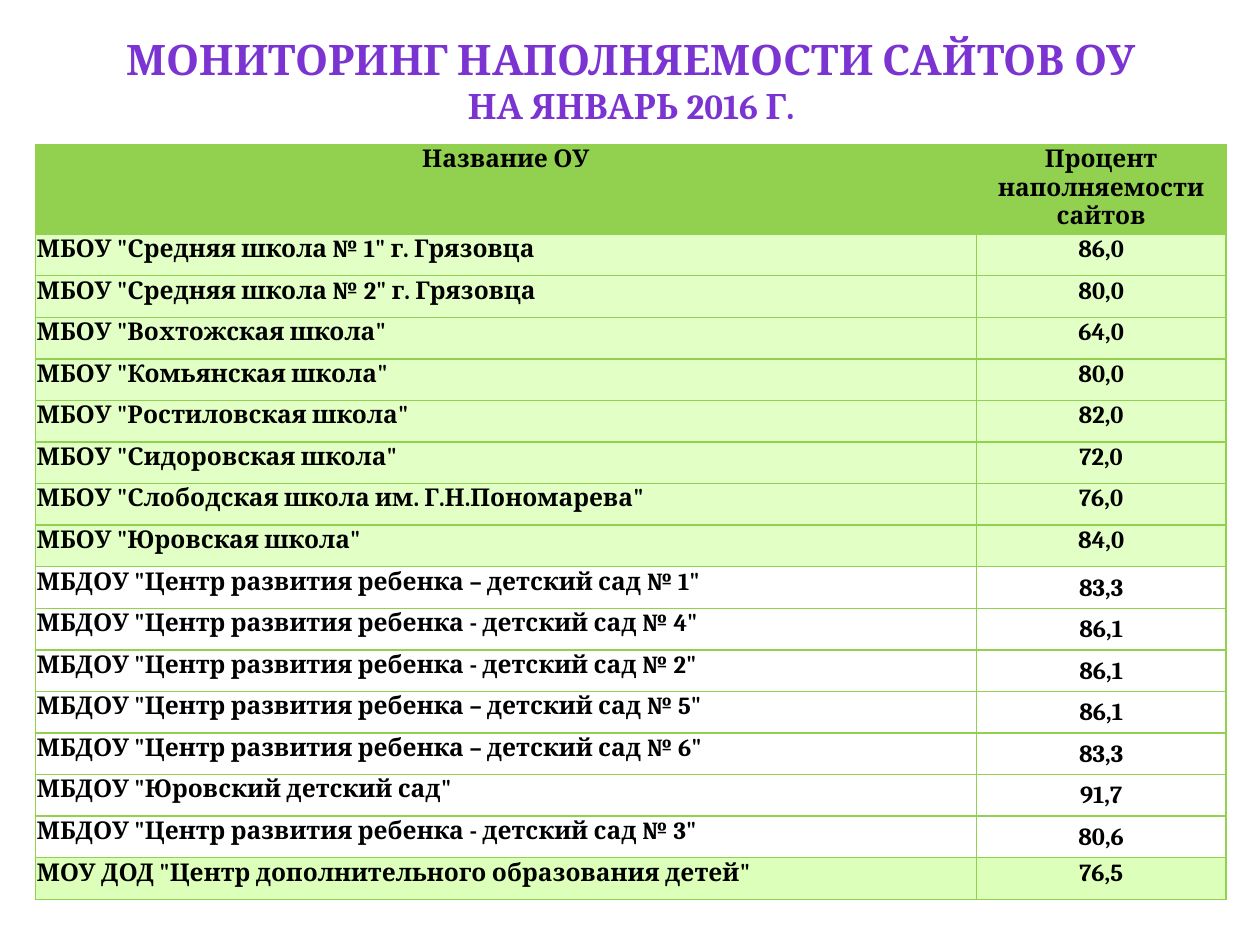
from typing import NamedTuple

from lxml.etree import SubElement as Sub
from pptx import Presentation
from pptx.dml.color import RGBColor as Rgb
from pptx.enum.text import MSO_ANCHOR as Anchor, PP_ALIGN as Align
from pptx.oxml.ns import qn
from pptx.util import Inches, Pt

HUES = {
    "title": "7B34D2",
    "text": "000000",
    "line": "92D050",
    "head": "92D050",
    "school": "E2FFC5",
    "nursery": "FFFFFF",
    "extra": "DCFFB9",
}
FONT = "Cambria"
WIDE, HIGH = Inches(10), Inches(7.5)
COLS = (0.747, 0.198)
ROW = 0.044


class Box(NamedTuple):
    left: float
    top: float
    width: float
    height: float

    def place(self) -> tuple[int, ...]:
        sides = (WIDE, HIGH, WIDE, HIGH)
        return tuple(int(share * side) for share, side in zip(self, sides))


class Entry(NamedTuple):
    name: str
    score: str
    kind: str


def center(number: int) -> str:
    return f'МБДОУ "Центр развития ребенка - детский сад № {number}"'


def dashed(number: int) -> str:
    return center(number).replace(" - ", " – ")


ENTRIES = [
    Entry("Название ОУ", "Процент наполняемости сайтов", "head"),
    Entry('МБОУ "Средняя школа № 1" г. Грязовца', "86,0", "school"),
    Entry('МБОУ "Средняя школа № 2" г. Грязовца', "80,0", "school"),
    Entry('МБОУ "Вохтожская школа"', "64,0", "school"),
    Entry('МБОУ "Комьянская школа"', "80,0", "school"),
    Entry('МБОУ "Ростиловская школа"', "82,0", "school"),
    Entry('МБОУ "Сидоровская школа"', "72,0", "school"),
    Entry('МБОУ "Слободская школа им. Г.Н.Пономарева"', "76,0", "school"),
    Entry('МБОУ "Юровская школа"', "84,0", "school"),
    Entry(dashed(1), "83,3", "nursery"),
    Entry(center(4), "86,1", "nursery"),
    Entry(center(2), "86,1", "nursery"),
    Entry(dashed(5), "86,1", "nursery"),
    Entry(dashed(6), "83,3", "nursery"),
    Entry('МБДОУ "Юровский детский сад"', "91,7", "nursery"),
    Entry(center(3), "80,6", "nursery"),
    Entry('МОУ ДОД "Центр дополнительного образования детей"', "76,5", "extra"),
]


def style(run, size: int, hue: str) -> None:
    font = run.font
    font.name, font.size, font.bold = FONT, Pt(size), True
    font.color.rgb = Rgb.from_string(HUES[hue])


def border(cell) -> None:
    props = cell._tc.get_or_add_tcPr()
    for spot, side in enumerate(("lnL", "lnR", "lnT", "lnB")):
        line = Sub(props, qn(f"a:{side}"), w=str(Pt(1)))
        fill = Sub(line, qn("a:solidFill"))
        Sub(fill, qn("a:srgbClr"), val=HUES["line"])
        props.insert(spot, line)


def fill_cell(cell, text: str, kind: str, middle: bool, anchor: Anchor) -> None:
    cell.text_frame.text = text
    cell.margin_left = cell.margin_right = cell.margin_top = Inches(0.01)
    cell.margin_bottom = 0
    cell.vertical_anchor = anchor
    para = cell.text_frame.paragraphs[0]
    para.alignment = Align.CENTER if middle else Align.LEFT
    style(para.runs[0], 14, "text")
    cell.fill.solid()
    cell.fill.fore_color.rgb = Rgb.from_string(HUES[kind])
    border(cell)


def draw_title(slide, box: Box) -> None:
    frame = slide.shapes.add_textbox(*box.place()).text_frame
    frame.word_wrap = True
    frame.vertical_anchor = Anchor.MIDDLE
    para = frame.paragraphs[0]
    para.text = "МОНИТОРИНГ НАПОЛНЯЕМОСТИ САЙТОВ ОУ\vНА ЯНВАРЬ 2016 Г."
    para.alignment = Align.CENTER
    for run, size in zip(para.runs, (24, 20)):
        style(run, size, "title")


def draw_table(slide, box: Box) -> None:
    frame = slide.shapes.add_table(len(ENTRIES), len(COLS), *box.place())
    table = frame.table
    table.horz_banding = False
    for col, share in zip(table.columns, COLS):
        col.width = int(share * WIDE)
    for row, entry in zip(table.rows, ENTRIES):
        row.height = int(ROW * HIGH)
        name, score = row.cells
        anchor = Anchor.MIDDLE if entry.kind == "nursery" else Anchor.TOP
        fill_cell(name, entry.name, entry.kind, entry.kind == "head", Anchor.TOP)
        fill_cell(score, entry.score, entry.kind, True, anchor)
    frame.height = box.place()[3]


def main() -> None:
    deck = Presentation()
    deck.slide_width, deck.slide_height = WIDE, HIGH
    slide = deck.slides.add_slide(deck.slide_layouts[6])
    draw_title(slide, Box(0.051, 0.017, 0.9, 0.135))
    draw_table(slide, Box(0.028, 0.153, 0.945, 0.799))
    deck.save("out.pptx")


if __name__ == "__main__":
    main()
